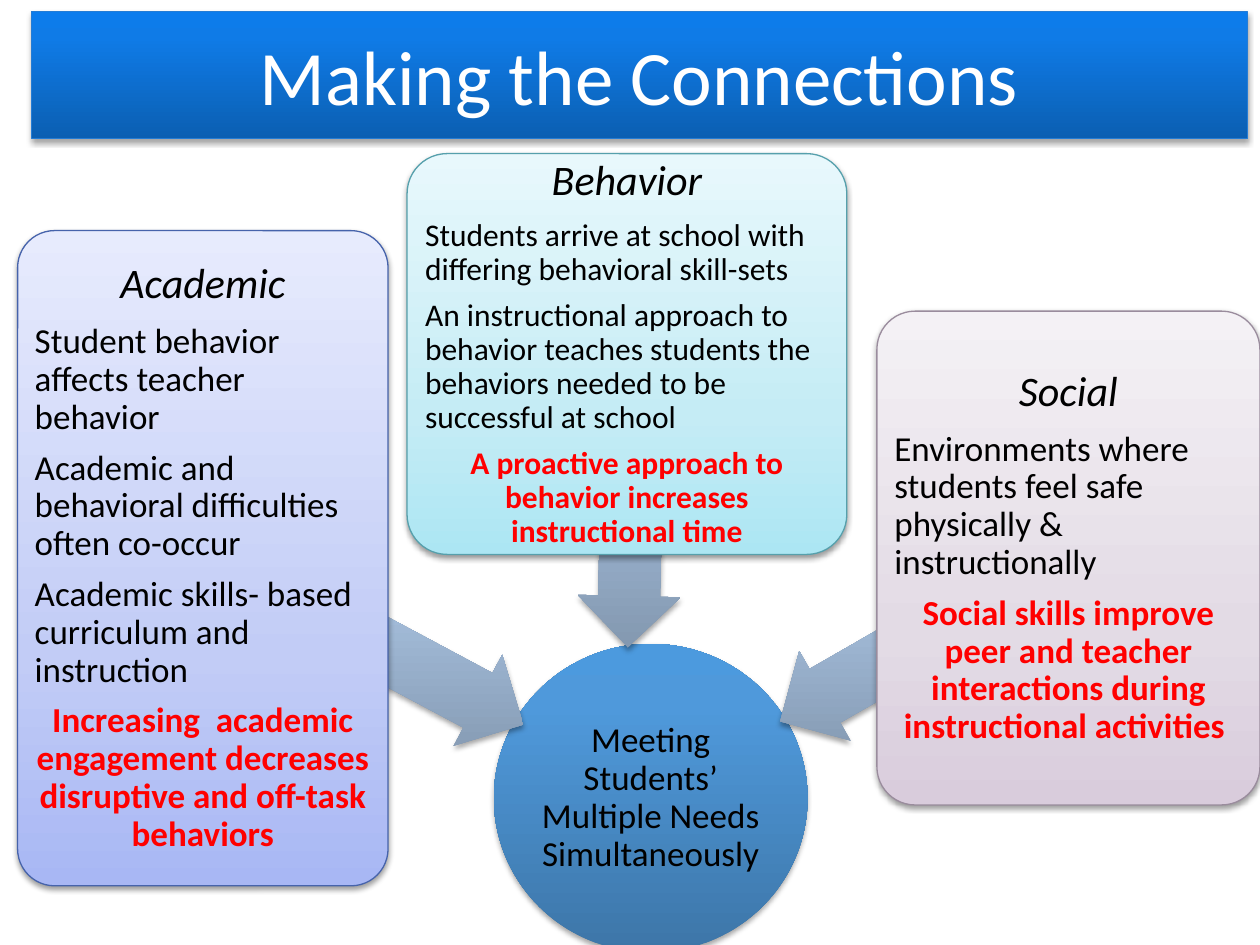
from copy import deepcopy

from lxml.etree import SubElement
from pptx import Presentation
from pptx.dml.color import RGBColor
from pptx.enum.shapes import MSO_SHAPE
from pptx.enum.text import MSO_ANCHOR, PP_ALIGN
from pptx.oxml.ns import qn
from pptx.util import Pt

BLACK = RGBColor(0x00, 0x00, 0x00)
WHITE = RGBColor(0xFF, 0xFF, 0xFF)
RED = RGBColor(0xFF, 0x00, 0x00)
TITLE_LINE = RGBColor(0x24, 0x7C, 0xD5)
ACADEMIC_LINE = RGBColor(0x46, 0x63, 0xAB)
BEHAVIOR_LINE = RGBColor(0x56, 0xA0, 0xAC)
SOCIAL_LINE = RGBColor(0x9A, 0x8C, 0x9D)
TITLE_COLORS = (RGBColor(0x0B, 0x5F, 0xB2), RGBColor(0x0F, 0x7B, 0xE7), RGBColor(0x0B, 0x7C, 0xED))
CIRCLE_COLORS = (RGBColor(0x3D, 0x76, 0xA8), RGBColor(0x4F, 0x99, 0xDB), RGBColor(0x4C, 0x9A, 0xDE))
ARROW_COLORS = (RGBColor(0x83, 0x98, 0xB0), RGBColor(0xAB, 0xC5, 0xE4), RGBColor(0xAA, 0xC6, 0xE7))
ACADEMIC_COLORS = (RGBColor(0xA8, 0xB7, 0xF4), RGBColor(0xC2, 0xCC, 0xF6), RGBColor(0xE7, 0xEB, 0xFD))
BEHAVIOR_COLORS = (RGBColor(0xAC, 0xE6, 0xF3), RGBColor(0xC5, 0xEC, 0xF5), RGBColor(0xE8, 0xF8, 0xFC))
SOCIAL_COLORS = (RGBColor(0xD9, 0xCC, 0xDC), RGBColor(0xE3, 0xDB, 0xE5), RGBColor(0xF4, 0xF1, 0xF5))

FONT = "Calibri"
HEADING_SIZE = 24
SPACE_AFTER_RATIO = 0.37

CARDS = [
    {
        "box": (10.1, 131.8, 211.7, 374.4),
        "arrow": (120.2, 339.8, 190.1, 59, 208.1),
        "colors": ACADEMIC_COLORS,
        "line": ACADEMIC_LINE,
        "size": 20,
        "heading": "Academic",
        "points": [
            "Student behavior affects teacher behavior",
            "Academic and behavioral difficulties often co-occur",
            "Academic skills- based curriculum and instruction",
        ],
        "result": "Increasing  academic engagement decreases disruptive and off-task behaviors",
    },
    {
        "box": (232.6, 87.8, 251.3, 229),
        "arrow": (282.2, 262.1, 157, 59, 271.4),
        "colors": BEHAVIOR_COLORS,
        "line": BEHAVIOR_LINE,
        "size": 18,
        "heading": "Behavior",
        "points": [
            "Students arrive at school with differing behavioral skill-sets",
            "An instructional approach to behavior teaches students the behaviors "
            "needed to be successful at school",
        ],
        "result": "A proactive approach to behavior increases instructional time",
    },
    {
        "box": (501.1, 177.8, 218.9, 282.2),
        "arrow": (434.2, 339.1, 175.7, 59, 330.2),
        "colors": SOCIAL_COLORS,
        "line": SOCIAL_LINE,
        "size": 20,
        "heading": "Social",
        "points": ["Environments where students feel safe physically & instructionally"],
        "result": "Social skills improve peer and teacher interactions during instructional activities ",
    },
]


def set_gradient(shape, colors, middle):
    """Fill a shape with three colours rising from bottom to top."""
    shape.fill.gradient()
    shape.fill.gradient_angle = 90
    gradient = shape._element.spPr.find(qn("a:gradFill"))
    gradient.set("rotWithShape", "0")
    stop_list = gradient.find(qn("a:gsLst"))
    stop_list.append(deepcopy(stop_list[0]))
    for stop, color, position in zip(shape.fill.gradient_stops, colors, (0, middle, 1)):
        stop.color.rgb = color
        stop.position = position


def set_shadow(shape, distance, opacity):
    """Give a shape a soft black shadow straight below it."""
    shape.shadow.inherit = False
    effects = shape._element.spPr.find(qn("a:effectLst"))
    shadow = SubElement(
        effects, qn("a:outerShdw"), blurRad=str(Pt(3.1)), dist=str(Pt(distance)),
        dir="5400000", rotWithShape="0",
    )
    color = SubElement(shadow, qn("a:srgbClr"), val=str(BLACK))
    SubElement(color, qn("a:alpha"), val=str(opacity * 1000))


def set_outline(shape, color=None):
    """Draw a thin outline, or none when no colour is given."""
    if color is None:
        shape.line.fill.background()
    else:
        shape.line.color.rgb = color
        shape.line.width = Pt(0.75)


def add_shape(slide, kind, box, colors, middle=0.8, line=None, shadow=(1.8, 35)):
    """Add a preset shape with gradient, outline and shadow."""
    shape = slide.shapes.add_shape(kind, *(Pt(length) for length in box))
    set_gradient(shape, colors, middle)
    set_outline(shape, line)
    set_shadow(shape, *shadow)
    return shape


def prepare_frame(shape, inset):
    """Set wrapping, middle anchor and equal insets."""
    frame = shape.text_frame
    frame.word_wrap = True
    frame.vertical_anchor = MSO_ANCHOR.MIDDLE
    frame.margin_left = frame.margin_right = Pt(inset)
    frame.margin_top = frame.margin_bottom = Pt(inset)
    return frame


def write_paragraph(paragraph, text, size, align=PP_ALIGN.CENTER, color=BLACK, bold=False, italic=False):
    """Write one formatted paragraph."""
    paragraph.text = text
    paragraph.alignment = align
    paragraph.line_spacing = 0.9
    paragraph.space_after = Pt(round(size * SPACE_AFTER_RATIO, 1))
    paragraph.font.name = FONT
    paragraph.font.size = Pt(size)
    paragraph.font.color.rgb = color
    paragraph.font.bold = bold
    paragraph.font.italic = italic


def add_title(slide, text):
    """Format the title placeholder as a banner."""
    title = slide.shapes.title
    title.left, title.top, title.width, title.height = Pt(18), Pt(6.5), Pt(694.8), Pt(72.7)
    set_gradient(title, TITLE_COLORS, 0.8)
    set_outline(title, TITLE_LINE)
    set_shadow(title, 1.8, 35)
    title.text_frame.vertical_anchor = MSO_ANCHOR.MIDDLE
    paragraph = title.text_frame.paragraphs[0]
    paragraph.text = text
    paragraph.alignment = PP_ALIGN.CENTER
    paragraph.font.name = FONT
    paragraph.font.size = Pt(44)
    paragraph.font.color.rgb = WHITE


def add_circle(slide, text):
    """Add the central circle the arrows point to."""
    circle = add_shape(slide, MSO_SHAPE.OVAL, (282.2, 367.9, 179.3, 176.4), CIRCLE_COLORS)
    frame = prepare_frame(circle, 0.72)
    write_paragraph(frame.paragraphs[0], text, 20)


def add_arrow(slide, left, top, width, height, rotation):
    """Add a rotated block arrow."""
    arrow = add_shape(slide, MSO_SHAPE.LEFT_ARROW, (left, top, width, height), ARROW_COLORS)
    arrow.adjustments[0] = 0.6
    arrow.adjustments[1] = 0.5
    arrow.rotation = rotation


def add_card(slide, card):
    """Add a rounded card with heading, points and result."""
    shape = add_shape(
        slide, MSO_SHAPE.ROUNDED_RECTANGLE, card["box"], card["colors"],
        middle=0.35, line=card["line"], shadow=(1.6, 38),
    )
    shape.adjustments[0] = 0.1
    frame = prepare_frame(shape, 3.6)
    write_paragraph(frame.paragraphs[0], card["heading"], HEADING_SIZE, italic=True)
    for point in card["points"]:
        write_paragraph(frame.add_paragraph(), point, card["size"], align=PP_ALIGN.LEFT)
    write_paragraph(frame.add_paragraph(), card["result"], card["size"], color=RED, bold=True)


def main():
    """Build and save the slide."""
    presentation = Presentation()
    presentation.slide_width, presentation.slide_height = Pt(720), Pt(540)
    slide = presentation.slides.add_slide(presentation.slide_layouts[5])
    add_title(slide, "Making the Connections")
    add_circle(slide, "Meeting Students’ Multiple Needs Simultaneously")
    for card in CARDS:
        add_arrow(slide, *card["arrow"])
        add_card(slide, card)
    presentation.save("out.pptx")


if __name__ == "__main__":
    main()
